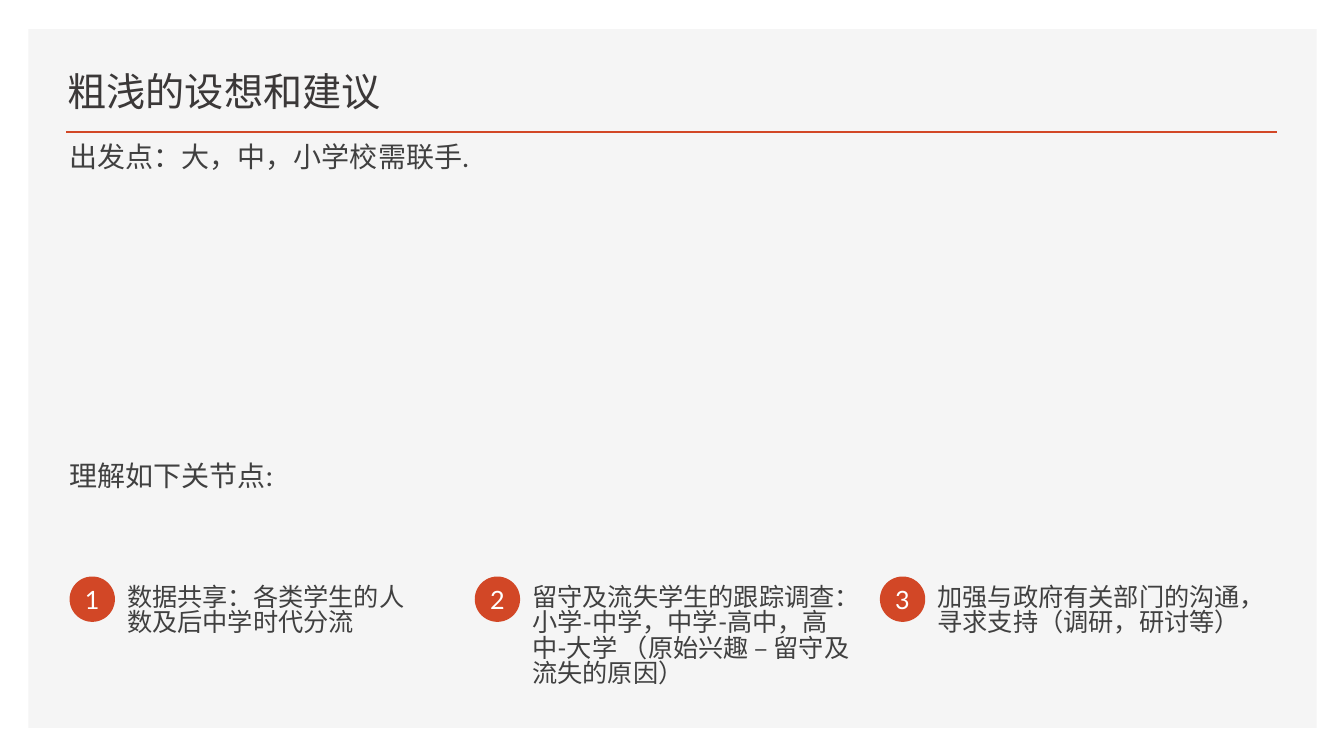
from dataclasses import dataclass

from pptx import Presentation
from pptx.dml.color import RGBColor
from pptx.enum import shapes, text
from pptx.oxml import xmlchemy
from pptx.util import Pt


@dataclass(frozen=True)
class Theme:
    font: str = "Lato"
    panel: RGBColor = RGBColor(0xF5, 0xF5, 0xF5)
    accent: RGBColor = RGBColor(0xD2, 0x47, 0x26)
    heading: RGBColor = RGBColor(0x3B, 0x38, 0x38)
    ink: RGBColor = RGBColor(0x40, 0x40, 0x40)
    white: RGBColor = RGBColor(0xFF, 0xFF, 0xFF)
    heading_size: int = 28
    premise_size: int = 20
    point_size: int = 18


THEME = Theme()
HEADING = "粗浅的设想和建议"
PREMISES = ["出发点：大，中，小学校需联手.", "理解如下关节点:"]
PREMISE_GAP = 190
POINTS = [
    ("数据共享：各类学生的人数及后中学时代分流", 230),
    ("留守及流失学生的跟踪调查：小学-中学，中学-高中，高中-大学 （原始兴趣 – 留守及流失的原因）", 245),
    ("加强与政府有关部门的沟通，寻求支持（调研，研讨等）", 245),
]
POINT_LEFT, POINT_TOP, POINT_PITCH = 49.7, 411.8, 289.4
BADGE_SIZE = 32.4


def place(item, left, top, width, height):
    item.left, item.top = Pt(left), Pt(top)
    item.width, item.height = Pt(width), Pt(height)


def style(paragraph, size, color, align=text.PP_ALIGN.LEFT):
    paragraph.alignment = align
    for run in paragraph.runs:
        run.font.name = THEME.font
        run.font.size = Pt(size)
        run.font.color.rgb = color


def space(paragraph, before=10):
    paragraph.line_spacing = Pt(18)
    paragraph.space_before = Pt(before)
    paragraph.space_after = Pt(20)


def remove_bullet(paragraph):
    properties = paragraph._p.get_or_add_pPr()
    properties.set("marL", "0")
    properties.set("indent", "0")
    properties.append(xmlchemy.OxmlElement("a:buNone"))


def add_solid(slide, kind, left, top, width, height, color):
    solid = slide.shapes.add_shape(kind, Pt(left), Pt(top), Pt(width), Pt(height))
    solid.shadow.inherit = False
    solid.fill.solid()
    solid.fill.fore_color.rgb = color
    solid.line.fill.background()
    return solid


def add_rule(slide, left, right, y):
    rule = slide.shapes.add_connector(
        shapes.MSO_CONNECTOR.STRAIGHT, Pt(left), Pt(y), Pt(right), Pt(y)
    )
    rule.line.color.rgb = THEME.accent
    rule.line.width = Pt(2)
    rule._element.spPr.append(xmlchemy.OxmlElement("a:effectLst"))


def fill_heading(slide):
    heading = slide.shapes.title
    place(heading, 41, 35.3, 541.4, 50.4)
    frame = heading.text_frame
    frame.text = HEADING
    frame.auto_size = text.MSO_AUTO_SIZE.NONE
    frame.vertical_anchor = text.MSO_ANCHOR.BOTTOM
    frame.paragraphs[0].line_spacing = 0.9
    style(frame.paragraphs[0], THEME.heading_size, THEME.heading)


def fill_premises(slide):
    premises = slide.placeholders[1]
    place(premises, 42.5, 102.2, 479.5, 260)
    frame = premises.text_frame
    frame.text = "\n".join(PREMISES)
    frame.auto_size = text.MSO_AUTO_SIZE.NONE
    for paragraph, before in zip(frame.paragraphs, (10, PREMISE_GAP)):
        space(paragraph, before)
        remove_bullet(paragraph)
        style(paragraph, THEME.premise_size, THEME.ink)


def add_badge(slide, left, number):
    badge = add_solid(
        slide, shapes.MSO_SHAPE.OVAL, left, POINT_TOP, BADGE_SIZE, BADGE_SIZE, THEME.accent
    )
    frame = badge.text_frame
    frame.margin_left = frame.margin_right = frame.margin_top = frame.margin_bottom = 0
    frame.vertical_anchor = text.MSO_ANCHOR.MIDDLE
    frame.word_wrap = False
    frame.text = str(number)
    style(frame.paragraphs[0], THEME.point_size, THEME.white, text.PP_ALIGN.CENTER)


def add_point(slide, index, wording, width):
    left = POINT_LEFT + index * POINT_PITCH
    add_badge(slide, left, index + 1)
    point = slide.shapes.add_textbox(Pt(left + 34), Pt(POINT_TOP + 3.6), Pt(width), Pt(104))
    frame = point.text_frame
    frame.word_wrap = True
    frame.text = wording
    space(frame.paragraphs[0])
    style(frame.paragraphs[0], THEME.point_size, THEME.ink)


def main():
    deck = Presentation()
    deck.slide_width, deck.slide_height = Pt(960), Pt(540)
    slide = deck.slides.add_slide(deck.slide_layouts[1])
    panel = add_solid(slide, shapes.MSO_SHAPE.RECTANGLE, 20.2, 20.9, 920.2, 499, THEME.panel)
    slide.shapes._spTree.insert(2, panel._element)
    add_rule(slide, 47.5, 912.2, 94.3)
    fill_heading(slide)
    fill_premises(slide)
    for index, (wording, width) in enumerate(POINTS):
        add_point(slide, index, wording, width)
    deck.save("out.pptx")


if __name__ == "__main__":
    main()
